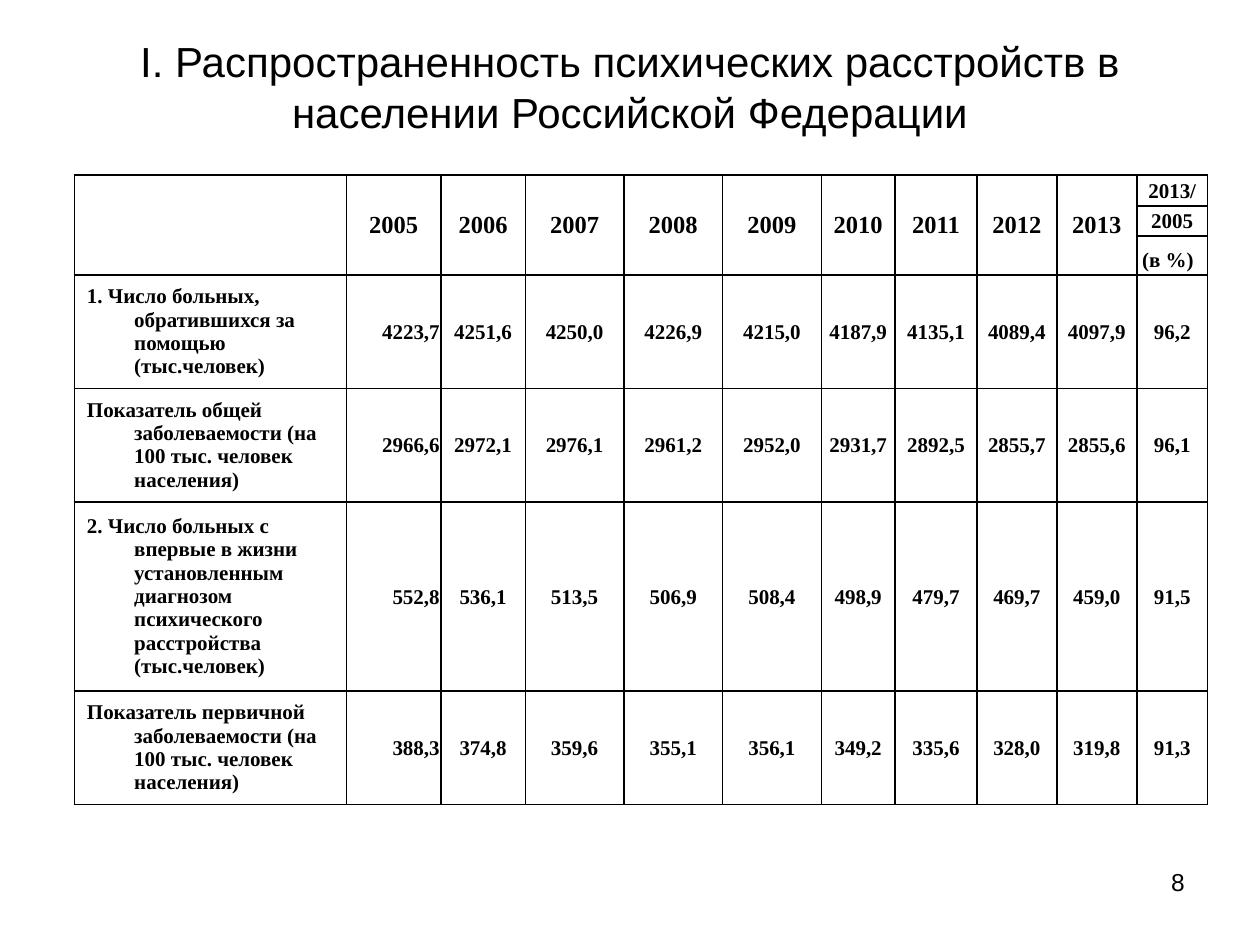
from lxml import etree
from pptx import Presentation
from pptx.dml.color import RGBColor
from pptx.enum.text import MSO_ANCHOR, PP_ALIGN
from pptx.oxml.ns import qn
from pptx.util import Pt

LEFT, CENTER, RIGHT = PP_ALIGN.LEFT, PP_ALIGN.CENTER, PP_ALIGN.RIGHT
TOP, MIDDLE = MSO_ANCHOR.TOP, MSO_ANCHOR.MIDDLE
COLORS = {"text": "000000", "line": "000000", "cell": "FFFFFF"}
SANS, SERIF = "Arial", "Times New Roman"

# Content
TITLE = "I. Распространенность психических расстройств в населении Российской Федерации"
PAGE = "8"
YEARS = [str(year) for year in range(2005, 2014)]
RATIO_HEAD = ["2013/", "2005", "(в %)"]
ROWS = [
    ("1. Число больных, обратившихся за помощью (тыс.человек)",
     "4223,7 4251,6 4250,0 4226,9 4215,0 4187,9 4135,1 4089,4 4097,9 96,2"),
    ("Показатель общей заболеваемости (на 100 тыс. человек населения)",
     "2966,6 2972,1 2976,1 2961,2 2952,0 2931,7 2892,5 2855,7 2855,6 96,1"),
    ("2. Число больных с впервые в жизни установленным диагнозом "
     "психического расстройства (тыс.человек)",
     "552,8 536,1 513,5 506,9 508,4 498,9 479,7 469,7 459,0 91,5"),
    ("Показатель первичной заболеваемости (на 100 тыс. человек населения)",
     "388,3 374,8 359,6 355,1 356,1 349,2 335,6 328,0 319,8 91,3"),
]

# Layout, in points; rows grow to fit their text
COL_WIDTHS = [155.5, 54, 48.2, 56.4, 56.4, 56.4, 42.2, 46.8, 45.6, 45.8, 40.4]
ROW_HEIGHTS = [17.7, 17.1, 11.5, 45.4, 61.2, 61.2, 61.2]
HEAD_ROWS = len(RATIO_HEAD)
TIGHT = (0.7, 0.7, 0.7, 0)
NORMAL = (7.2, 3.6, 7.2, 3.6)
HANG = 27


def add_run(p, text, size, font, bold=False):
    r = p.add_run()
    r.text = text
    r.font.size = Pt(size)
    r.font.name = font
    r.font.bold = bold
    r.font.color.rgb = RGBColor.from_string(COLORS["text"])


def put_text(tf, text, size=12, font=SERIF, bold=True, align=CENTER, hang=0):
    p = tf.paragraphs[0]
    p.alignment = align
    if hang:
        pPr = p._p.get_or_add_pPr()
        pPr.set("marL", str(Pt(hang)))
        pPr.set("indent", str(-Pt(hang)))
    add_run(p, text, size, font, bold)
    return p


def add_text(slide, box, text, anchor=TOP, **fmt):
    tf = slide.shapes.add_textbox(*map(Pt, box)).text_frame
    tf.word_wrap = True
    tf.vertical_anchor = anchor
    put_text(tf, text, font=SANS, bold=False, **fmt)


def style_cell(cell, margins):
    cell.vertical_anchor = MIDDLE
    (cell.margin_left, cell.margin_right,
     cell.margin_top, cell.margin_bottom) = (Pt(margins[i]) for i in (0, 2, 1, 3))
    # Small end mark, so that cells without text do not stretch their row
    etree.SubElement(cell.text_frame.paragraphs[0]._p, qn("a:endParaRPr"), sz="800")
    tcPr = cell._tc.get_or_add_tcPr()
    for side in ("lnL", "lnR", "lnT", "lnB"):
        ln = etree.SubElement(tcPr, qn(f"a:{side}"), w=str(Pt(1)))
        fill = etree.SubElement(ln, qn("a:solidFill"))
        etree.SubElement(fill, qn("a:srgbClr"), val=COLORS["line"])
    cell.fill.solid()
    cell.fill.fore_color.rgb = RGBColor.from_string(COLORS["cell"])


def add_data_table(slide):
    n_rows, n_cols = len(ROW_HEIGHTS), len(COL_WIDTHS)
    table = slide.shapes.add_table(
        n_rows, n_cols, Pt(42.5), Pt(100.1),
        Pt(sum(COL_WIDTHS)), Pt(sum(ROW_HEIGHTS))).table
    table.first_row = table.horz_banding = False
    for col, width in zip(table.columns, COL_WIDTHS):
        col.width = Pt(width)
    for row, height in zip(table.rows, ROW_HEIGHTS):
        row.height = Pt(height)
    for r in range(n_rows):
        for c in range(n_cols):
            is_label = c == 0 and r >= HEAD_ROWS
            style_cell(table.cell(r, c), NORMAL if is_label else TIGHT)

    # Header: years span three rows, the ratio column is split
    for c, head in enumerate([""] + YEARS):
        cell = table.cell(0, c)
        cell.merge(table.cell(HEAD_ROWS - 1, c))
        if head:
            put_text(cell.text_frame, head, size=14)
    for r, head in enumerate(RATIO_HEAD):
        p = put_text(table.cell(r, n_cols - 1).text_frame, head)
    add_run(p, " ", 18, SANS)

    # Body: hanging labels, first year right-aligned
    for r, (label, values) in enumerate(ROWS, HEAD_ROWS):
        put_text(table.cell(r, 0).text_frame, label, align=LEFT, hang=HANG)
        for c, value in enumerate(values.split(), 1):
            put_text(table.cell(r, c).text_frame, value,
                     align=RIGHT if c == 1 else CENTER)


def main():
    prs = Presentation()
    prs.slide_width, prs.slide_height = Pt(720), Pt(540)
    s = prs.slides.add_slide(prs.slide_layouts[6])
    add_text(s, (516, 492, 168, 37.5), PAGE, size=14, align=RIGHT)
    add_text(s, (36, 21.6, 648, 55.5), TITLE, anchor=MIDDLE, size=24)
    add_data_table(s)
    prs.save("out.pptx")


if __name__ == "__main__":
    main()
